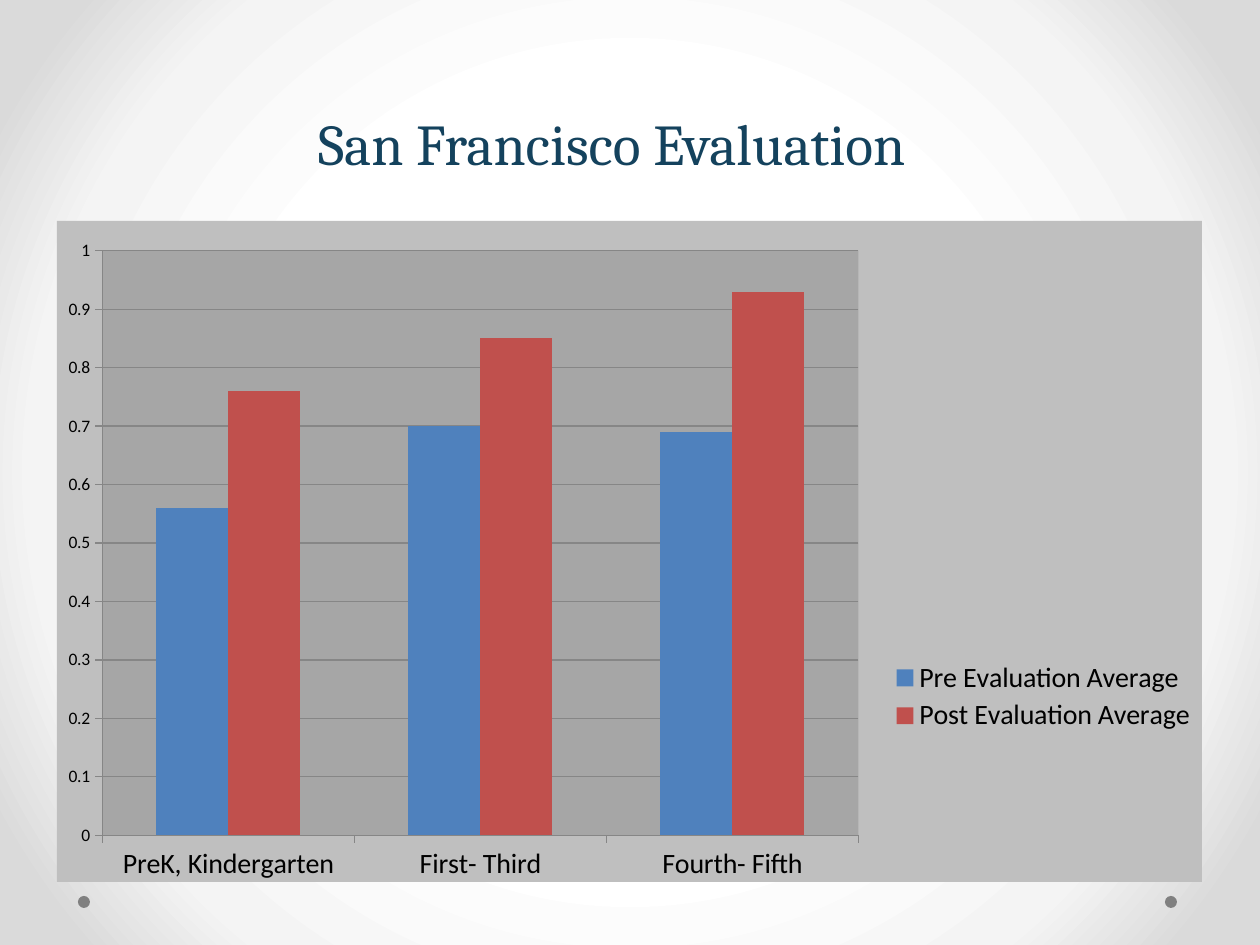
"""Build the San Francisco Evaluation slide with its clustered column chart."""
from pptx import Presentation
from pptx.chart.data import CategoryChartData
from pptx.dml.color import RGBColor
from pptx.enum.chart import XL_CHART_TYPE, XL_LEGEND_POSITION, XL_TICK_MARK
from pptx.enum.shapes import MSO_SHAPE
from pptx.enum.text import MSO_ANCHOR, PP_ALIGN
from pptx.oxml import parse_xml
from pptx.oxml.ns import nsdecls, qn
from pptx.util import Emu, Pt

COLUMNS = XL_CHART_TYPE.COLUMN_CLUSTERED
LEGEND_RIGHT = XL_LEGEND_POSITION.RIGHT
TICK_OUTSIDE = XL_TICK_MARK.OUTSIDE
OVAL = MSO_SHAPE.OVAL
BOTTOM = MSO_ANCHOR.BOTTOM
CENTER = PP_ALIGN.CENTER

NAVY = RGBColor(0x14, 0x42, 0x5D)
BLACK = RGBColor(0, 0, 0)
DOT_GRAY = RGBColor(0x80, 0x80, 0x80)
LINE_GRAY = RGBColor(0x86, 0x86, 0x86)
CHART_GRAY = RGBColor(0xBF, 0xBF, 0xBF)
PLOT_GRAY = RGBColor(0xA6, 0xA6, 0xA6)
BLUE = RGBColor(0x4F, 0x81, 0xBD)
RED = RGBColor(0xC0, 0x50, 0x4D)
BACKGROUND_STOPS = [
    (50, RGBColor(0xFF, 0xFF, 0xFF)),
    (76, RGBColor(0xF4, 0xF4, 0xF4)),
    (92, RGBColor(0xDA, 0xDA, 0xDA)),
]
SCALE = 914400 / 126


def px(*lengths):
    return [Emu(round(length * SCALE)) for length in lengths]


def chart_xml(kind, **values):
    if kind == "fill":
        return parse_xml(
            f'<c:spPr {nsdecls("c", "a")}><a:solidFill><a:srgbClr val="{values["color"]}"/>'
            "</a:solidFill><a:ln><a:noFill/></a:ln></c:spPr>")
    modes = "".join(f'<c:{axis}Mode val="edge"/>' for axis in "xy")
    sizes = "".join(f'<c:{name} val="{value}"/>' for name, value in values.items())
    return parse_xml(
        f'<c:layout {nsdecls("c")}><c:manualLayout>{modes}{sizes}</c:manualLayout></c:layout>')


deck = Presentation()
deck.slide_width, deck.slide_height = px(1260, 945)
page = deck.slides.add_slide(deck.slide_layouts[0])
subtitle = page.placeholders[1].element
subtitle.getparent().remove(subtitle)

page.background.fill.gradient()
gradient = page.element.find(".//" + qn("a:gradFill"))
stops = "".join(
    f'<a:gs pos="{percent * 1000}"><a:srgbClr val="{color}"/></a:gs>'
    for percent, color in BACKGROUND_STOPS)
gradient.getparent().replace(gradient, parse_xml(
    f'<a:gradFill {nsdecls("a")} rotWithShape="1"><a:gsLst>{stops}</a:gsLst>'
    '<a:path path="circle"><a:fillToRect l="50000" t="50000" r="50000" b="50000"/></a:path>'
    "</a:gradFill>"))

for left in (78, 1165):
    dot = page.shapes.add_shape(OVAL, *px(left, 896, 12, 12))
    dot.shadow.inherit = False
    dot.fill.solid()
    dot.fill.fore_color.rgb = DOT_GRAY
    dot.line.fill.background()

title = page.shapes.title
title.left, title.top, title.width, title.height = px(84, 21, 1071, 231)
frame = title.text_frame
frame.text = "San Francisco Evaluation"
frame.word_wrap = True
frame.vertical_anchor = BOTTOM
frame.margin_right, frame.margin_bottom = px(28, 75)
heading = frame.paragraphs[0]
heading.alignment = CENTER
heading.font.size = Pt(33)
heading.font.name = "Cambria"
heading.font.color.rgb = NAVY

scores = CategoryChartData()
scores.categories = ["PreK, Kindergarten", "First- Third", "Fourth- Fifth"]
scores.add_series("Pre Evaluation Average", (0.56, 0.7, 0.69))
scores.add_series("Post Evaluation Average", (0.76, 0.85, 0.93))
chart = page.shapes.add_chart(COLUMNS, *px(57, 221, 1145, 661), scores).chart
chart.has_title = False
chart.has_legend = True
legend = chart.legend
legend.position = LEGEND_RIGHT
legend.include_layout = False

category_axis, value_axis = chart.category_axis, chart.value_axis
for part, size in ((chart, 10), (legend, 16),
                   (category_axis.tick_labels, 16), (value_axis.tick_labels, 10)):
    part.font.size = Pt(size)
    part.font.name = "Calibri"
    part.font.color.rgb = BLACK

value_axis.minimum_scale = 0
value_axis.maximum_scale = 1
value_axis.major_unit = 0.1
value_axis.has_major_gridlines = True
for axis in (category_axis, value_axis):
    axis.major_tick_mark = TICK_OUTSIDE
for line in (category_axis.format.line, value_axis.format.line,
             value_axis.major_gridlines.format.line):
    line.color.rgb = LINE_GRAY
    line.width = Pt(0.75)

plot = chart.plots[0]
plot.gap_width = 150
plot.vary_by_categories = False
for series, color in zip(plot.series, (BLUE, RED)):
    series.format.fill.solid()
    series.format.fill.fore_color.rgb = color

chart_space = chart.element
chart_space.find(qn("c:txPr")).addprevious(chart_xml("fill", color=CHART_GRAY))
plot_area = chart_space.find(".//" + qn("c:plotArea"))
legend_box = chart_space.find(".//" + qn("c:legend"))
for area in (plot_area, legend_box):
    for layout in area.findall(qn("c:layout")):
        area.remove(layout)
plot_area.insert(0, chart_xml("layout", x=0.01, y=0.03, w=0.69, h=0.97))
plot_area.append(chart_xml("fill", color=PLOT_GRAY))
legend_box.find(qn("c:legendPos")).addnext(
    chart_xml("layout", x=0.73, y=0.66, w=0.27, h=0.12))

deck.save("out.pptx")
